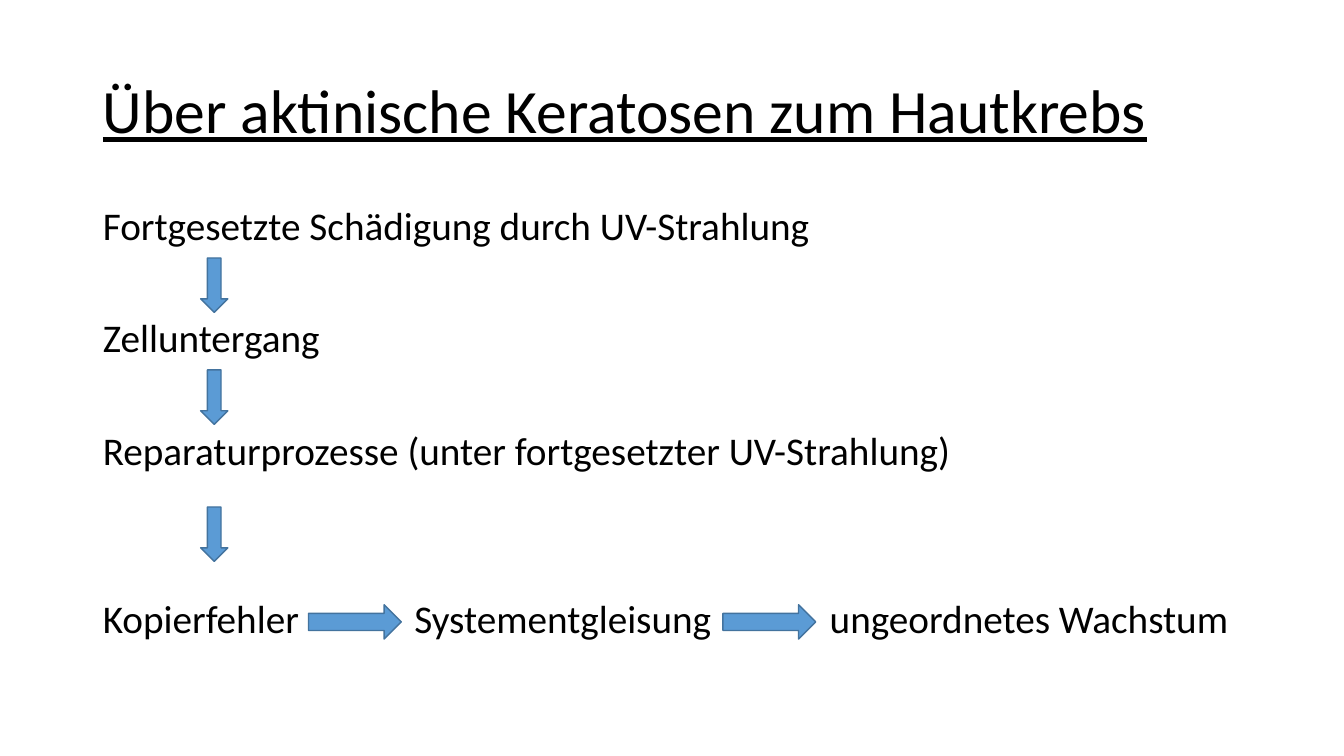
import pptx
import pptx.dml.color
import pptx.enum.shapes
import pptx.enum.text
import pptx.util
from pptx.util import Inches

SHAPES = pptx.enum.shapes.MSO_SHAPE
TITLE = "Über aktinische Keratosen zum Hautkrebs"
STEPS = [
    ("Fortgesetzte Schädigung durch UV-Strahlung", 10),
    ("Zelluntergang", 49.5),
    ("Reparaturprozesse (unter fortgesetzter UV-Strahlung)", 50.5),
    ("Kopierfehler\t\tSystementgleisung\t\tungeordnetes Wachstum", 90),
]
TAB_WIDTH = Inches(1.03)
DOWN_ARROW_TOPS = [2.56, 3.67, 5.03]
RIGHT_ARROW_LEFTS = [3.06, 7.17]


def color(value):
    """Return the colour for a hex string."""
    return pptx.dml.color.RGBColor.from_string(value)


def place(shape, left, top, width, height):
    """Move and size a placeholder, in inches."""
    shape.left, shape.top = Inches(left), Inches(top)
    shape.width, shape.height = Inches(width), Inches(height)


def format_paragraph(paragraph, size, space_before=0):
    """Give a paragraph its spacing, alignment and font."""
    paragraph.alignment = pptx.enum.text.PP_ALIGN.LEFT
    paragraph.line_spacing = 0.9
    paragraph.space_before = pptx.util.Pt(space_before)
    paragraph.font.name = "Calibri"
    paragraph.font.size = pptx.util.Pt(size)
    paragraph.font.color.rgb = color("000000")


def remove_bullet(paragraph):
    """Drop the bullet and its indent, and set the tab width."""
    properties = paragraph._p.get_or_add_pPr()
    properties.set("marL", "0")
    properties.set("indent", "0")
    properties.set("defTabSz", str(int(TAB_WIDTH)))
    properties.append(properties.makeelement(pptx.oxml.ns.qn("a:buNone")))


def fill_title(title):
    """Write the underlined title."""
    place(title, 0.92, 0.4, 11.5, 1.45)
    frame = title.text_frame
    frame.text = TITLE
    frame.auto_size = pptx.enum.text.MSO_AUTO_SIZE.NONE
    frame.vertical_anchor = pptx.enum.text.MSO_ANCHOR.MIDDLE
    format_paragraph(frame.paragraphs[0], 44)
    frame.paragraphs[0].font.underline = True


def fill_steps(body):
    """Write the steps of the chain, one paragraph each."""
    place(body, 0.92, 2, 11.5, 4.76)
    frame = body.text_frame
    frame.text = "\n".join(text for text, _ in STEPS)
    frame.auto_size = pptx.enum.text.MSO_AUTO_SIZE.NONE
    frame.vertical_anchor = pptx.enum.text.MSO_ANCHOR.TOP
    for paragraph, (_, space_before) in zip(frame.paragraphs, STEPS):
        remove_bullet(paragraph)
        format_paragraph(paragraph, 28, space_before)


def add_arrow(slide, kind, left, top, width, height):
    """Add a blue block arrow."""
    arrow = slide.shapes.add_shape(
        kind, Inches(left), Inches(top), Inches(width), Inches(height))
    arrow.shadow.inherit = False
    arrow.fill.solid()
    arrow.fill.fore_color.rgb = color("5B9BD5")
    arrow.line.color.rgb = color("43739E")
    arrow.line.width = pptx.util.Pt(1)


def main():
    """Build the slide and save it."""
    presentation = pptx.Presentation()
    presentation.slide_width = Inches(13.33)
    presentation.slide_height = Inches(7.5)
    slide = presentation.slides.add_slide(presentation.slide_layouts[1])
    fill_title(slide.shapes.title)
    fill_steps(slide.placeholders[1])
    for top in DOWN_ARROW_TOPS:
        add_arrow(slide, SHAPES.DOWN_ARROW, 1.99, top, 0.27, 0.54)
    for left in RIGHT_ARROW_LEFTS:
        add_arrow(slide, SHAPES.RIGHT_ARROW, left, 6, 0.92, 0.34)
    presentation.save("out.pptx")


if __name__ == "__main__":
    main()
